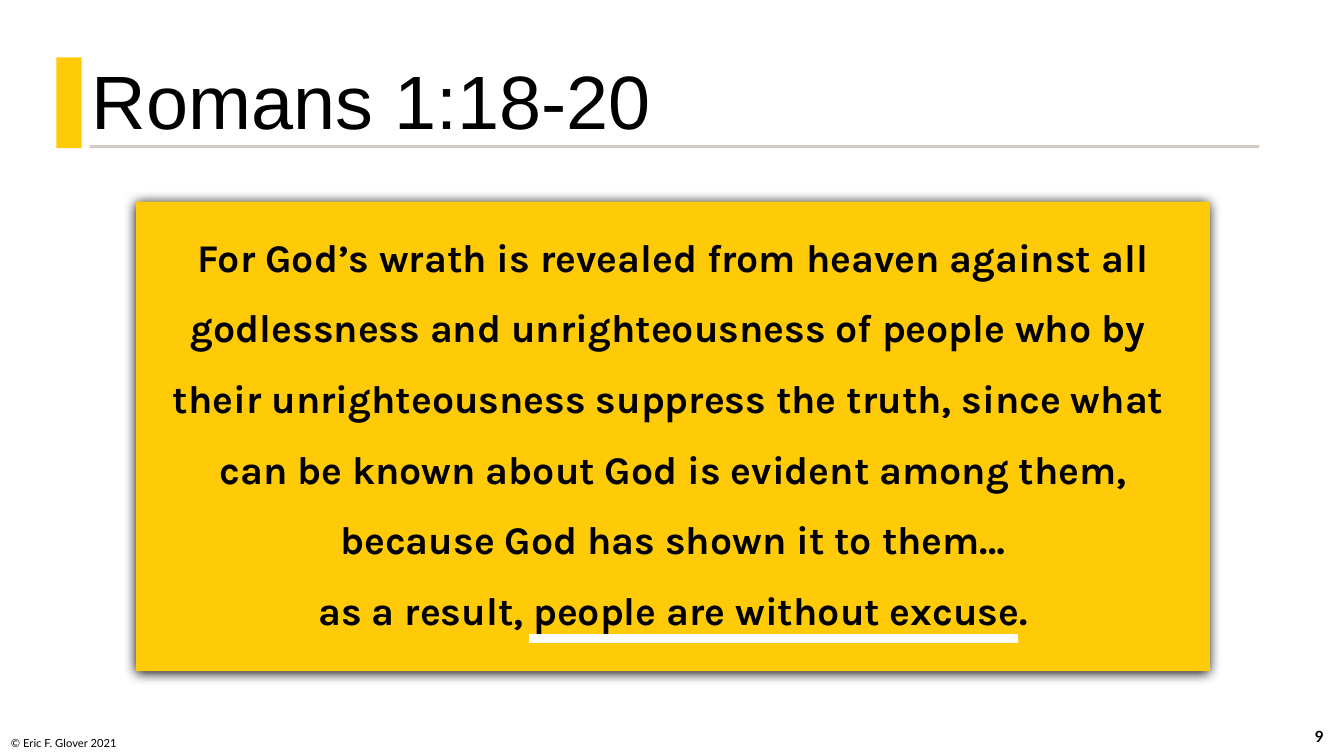
import pptx
import pptx.util
import pptx.dml.color
import pptx.enum.shapes
import pptx.enum.text
import pptx.oxml
import pptx.oxml.ns

Inches = pptx.util.Inches
Align = pptx.enum.text.PP_ALIGN
Anchor = pptx.enum.text.MSO_ANCHOR
HUES = {"gold": "FFCA08", "rule": "D3CAC4", "white": "FFFFFF", "black": "000000"}


def write(shape, text, font, size, bold=False, align=Align.LEFT,
          anchor=Anchor.MIDDLE, lines=None, after=None):
    frame = shape.text_frame
    frame.word_wrap = True
    frame.auto_size = pptx.enum.text.MSO_AUTO_SIZE.NONE
    frame.vertical_anchor = anchor
    frame.text = text
    for para in frame.paragraphs:
        para.alignment = align
        para.line_spacing = lines
        para.space_after = after
        for run in para.runs:
            run.font.name = font
            run.font.size = pptx.util.Pt(size)
            run.font.bold = bold
            run.font.color.rgb = pptx.dml.color.RGBColor.from_string(HUES["black"])


def block(left, top, width, height, hue):
    """Add a plain filled rectangle without outline or shadow."""
    shape = slide.shapes.add_shape(
        pptx.enum.shapes.MSO_SHAPE.RECTANGLE,
        Inches(left), Inches(top), Inches(width), Inches(height))
    shape.shadow.inherit = False
    shape.fill.solid()
    shape.fill.fore_color.rgb = pptx.dml.color.RGBColor.from_string(HUES[hue])
    shape.line.fill.background()
    return shape


deck = pptx.Presentation()
deck.slide_width = Inches(13.33)
deck.slide_height = Inches(7.5)
slide = deck.slides.add_slide(deck.slide_layouts[5])

# Footer
number = slide.shapes.add_textbox(Inches(12.84), Inches(7.11), Inches(0.49), Inches(0.4))
write(number, "9", "Lato", 11, bold=True, align=Align.CENTER, after=pptx.util.Pt(6))
credit = slide.shapes.add_textbox(Inches(0.01), Inches(7.21), Inches(1.57), Inches(0.28))
write(credit, "© Eric F. Glover 2021", "Lato", 8, anchor=Anchor.BOTTOM)

# Heading
title = slide.shapes.title
title.left, title.top = Inches(0.81), Inches(0.22)
title.width, title.height = Inches(11.84), Inches(1.28)
write(title, "Romans 1:18-20", "Arial", 54, anchor=Anchor.BOTTOM, lines=0.9)
block(0.89, 1.44, 11.6, 0.03, "rule")
block(0.56, 0.57, 0.25, 0.9, "gold")

# Verse
verse = block(1.35, 2, 10.65, 4.66, "gold")
frame = verse.text_frame
frame.margin_left = frame.margin_right = frame.margin_bottom = Inches(0.3)
frame.margin_top = 0
write(verse,
      "For God’s wrath is revealed from heaven against all "
      "godlessness and unrighteousness of people who by \v"
      "their unrighteousness suppress the truth, since what \v"
      "can be known about God is evident among them, "
      "because God has shown it to them…\v"
      "as a result, people are without excuse.",
      "Karla", 28, bold=True, align=Align.CENTER, lines=1.5)
glow = pptx.oxml.parse_xml(
    f'<a:outerShdw {pptx.oxml.ns.nsdecls("a")} blurRad="{pptx.util.Pt(8.5)}" '
    f'dist="{pptx.util.Pt(1)}" dir="5400000" algn="t" rotWithShape="0">'
    f'<a:srgbClr val="{HUES["black"]}"/></a:outerShdw>')
verse._element.spPr.find(pptx.oxml.ns.qn("a:effectLst")).append(glow)

# Underline of the closing words
stroke = block(5.25, 6.3, 4.84, 0.07, "white")
stroke.line.color.rgb = pptx.dml.color.RGBColor.from_string(HUES["white"])
stroke.line.width = pptx.util.Pt(1)

deck.save("out.pptx")
